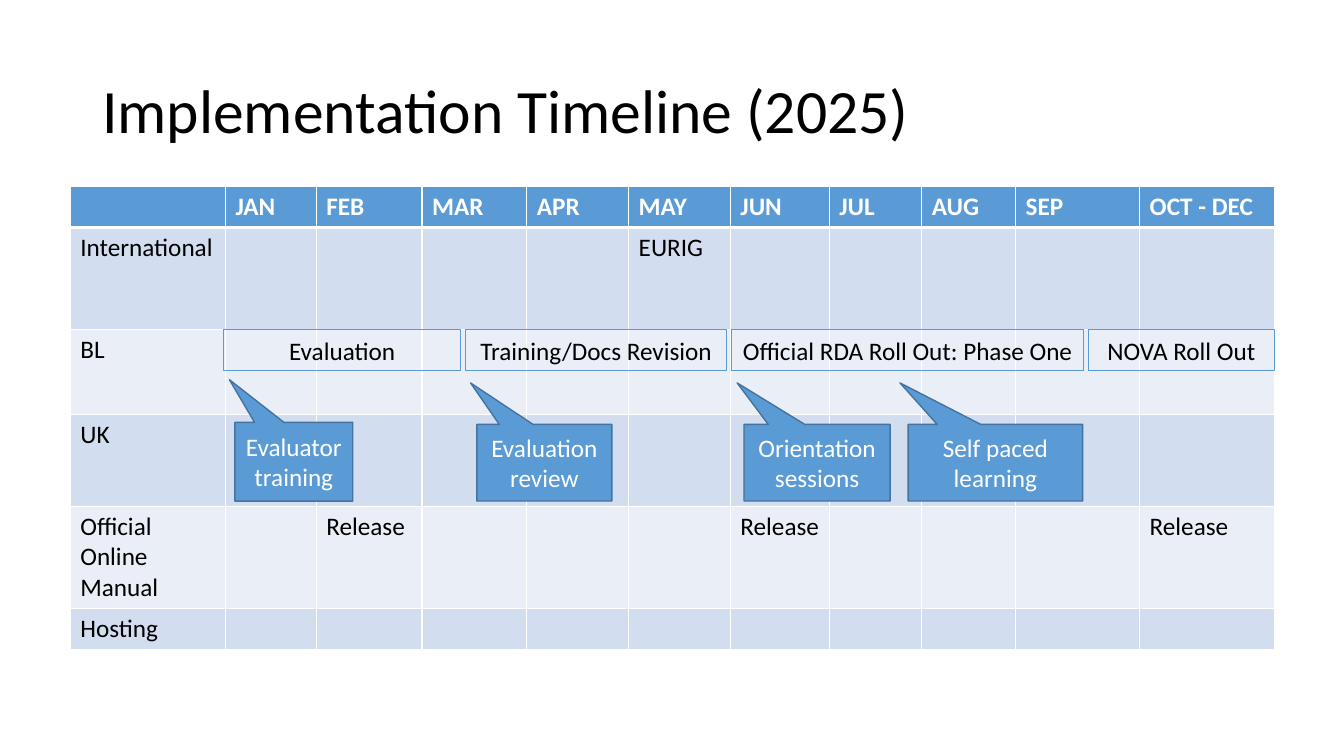
from lxml import etree
from pptx import Presentation
from pptx.dml.color import RGBColor
from pptx.enum.shapes import MSO_SHAPE
from pptx.enum.text import MSO_ANCHOR, PP_ALIGN
from pptx.oxml.ns import qn
from pptx.util import Pt

FONT = "Calibri"
BLACK, WHITE, BLUE, DARK_BLUE = "000000", "FFFFFF", "5B9BD5", "43739E"
BANDS = ["D2DEEF", "EAEFF7"]

TITLE = "Implementation Timeline (2025)"
COLUMNS = [
    ("", 110.9), ("JAN", 64.8), ("FEB", 75.6), ("MAR", 74.9),
    ("APR", 72.7), ("MAY", 72.7), ("JUN", 70.6), ("JUL", 66.2),
    ("AUG", 67), ("SEP", 88.6), ("OCT - DEC", 96.4),
]
HEADER_H = 29.2
TRACKS = [
    ("International", 72.8, {"MAY": "EURIG"}),
    ("BL", 60.7, {}),
    ("UK", 65.7, {}),
    ("Official Online Manual", 50.7,
     {"FEB": "Release", "JUN": "Release", "OCT - DEC": "Release"}),
    ("Hosting", 29.2, {}),
]
TABLE_LEFT, TABLE_TOP = 50.2, 133.2

PHASES = [
    ("Evaluation", 169.2),
    ("Training/Docs Revision", 186.5),
    ("Official RDA Roll Out: Phase One", 251.3),
    ("NOVA Roll Out", 132.5),
]
PHASE_LEFT, PHASE_TOP, PHASE_H, PHASE_GAP = 159.8, 235.4, 29.1, 3.6

CALLOUTS = [
    ("Evaluator training", 167.8, 84.2, 56.2),
    ("Evaluation review", 340.6, 96.5, 54.7),
    ("Orientation sessions", 531.4, 104.4, 54.7),
    ("Self paced learning", 648.7, 124.6, 54.7),
]
CALLOUT_BOTTOM = 357.9
CALLOUT_TIP = (-0.547, -1.043)


def rgb(value):
    return RGBColor.from_string(value)


def write(tf, text, color, size=18, bold=False, align=None):
    tf.word_wrap = True
    tf.text = text
    p = tf.paragraphs[0]
    p.alignment = align
    for r in p.runs:
        r.font.name, r.font.size, r.font.bold = FONT, Pt(size), bold
        r.font.color.rgb = rgb(color)


def add_borders(cell, widths):
    tc_pr = cell._tc.get_or_add_tcPr()
    for side, width in zip("LRTB", widths):
        ln = etree.SubElement(tc_pr, qn(f"a:ln{side}"), w=str(Pt(width)))
        fill = etree.SubElement(ln, qn("a:solidFill"))
        etree.SubElement(fill, qn("a:srgbClr"), val=WHITE)


def add_box(slide, kind, text, left, top, width, height, fill, line, line_w, color):
    sp = slide.shapes.add_shape(kind, Pt(left), Pt(top), Pt(width), Pt(height))
    sp.shadow.inherit = False
    if fill:
        sp.fill.solid()
        sp.fill.fore_color.rgb = rgb(fill)
    else:
        sp.fill.background()
    sp.line.color.rgb = rgb(line)
    sp.line.width = Pt(line_w)
    sp.text_frame.vertical_anchor = MSO_ANCHOR.MIDDLE
    write(sp.text_frame, text, color, align=PP_ALIGN.CENTER)
    return sp


def add_timeline(slide):
    heights = [HEADER_H] + [height for _, height, _ in TRACKS]
    widths = [width for _, width in COLUMNS]
    months = [month for month, _ in COLUMNS]
    rows = [months] + [
        [name] + [events.get(month, "") for month in months[1:]]
        for name, _, events in TRACKS
    ]
    table = slide.shapes.add_table(
        len(rows), len(months), Pt(TABLE_LEFT), Pt(TABLE_TOP),
        Pt(sum(widths)), Pt(sum(heights))).table
    for column, width in zip(table.columns, widths):
        column.width = Pt(width)
    for i, (row, height) in enumerate(zip(rows, heights)):
        table.rows[i].height = Pt(height)
        header = i == 0
        for j, text in enumerate(row):
            cell = table.cell(i, j)
            add_borders(cell, (1, 1, 3 if i == 1 else 1, 3 if header else 1))
            cell.fill.solid()
            cell.fill.fore_color.rgb = rgb(BLUE if header else BANDS[(i - 1) % 2])
            write(cell.text_frame, text, WHITE if header else BLACK, bold=header)


def main():
    prs = Presentation()
    prs.slide_width, prs.slide_height = Pt(960), Pt(540)
    slide = prs.slides.add_slide(prs.slide_layouts[6])

    add_timeline(slide)

    title = slide.shapes.add_textbox(Pt(66), Pt(28.8), Pt(828), Pt(104.4))
    tf = title.text_frame
    tf.vertical_anchor = MSO_ANCHOR.MIDDLE
    write(tf, TITLE, BLACK, size=44)
    tf.paragraphs[0].line_spacing = 0.9

    left = PHASE_LEFT
    for text, width in PHASES:
        add_box(slide, MSO_SHAPE.RECTANGLE, text, left, PHASE_TOP, width,
                PHASE_H, None, BLUE, 0.75, BLACK)
        left += width + PHASE_GAP

    for text, left, width, height in CALLOUTS:
        sp = add_box(slide, MSO_SHAPE.RECTANGULAR_CALLOUT, text, left,
                     CALLOUT_BOTTOM - height, width, height,
                     BLUE, DARK_BLUE, 1, WHITE)
        for i, offset in enumerate(CALLOUT_TIP):
            sp.adjustments[i] = offset

    prs.save("out.pptx")


if __name__ == "__main__":
    main()
